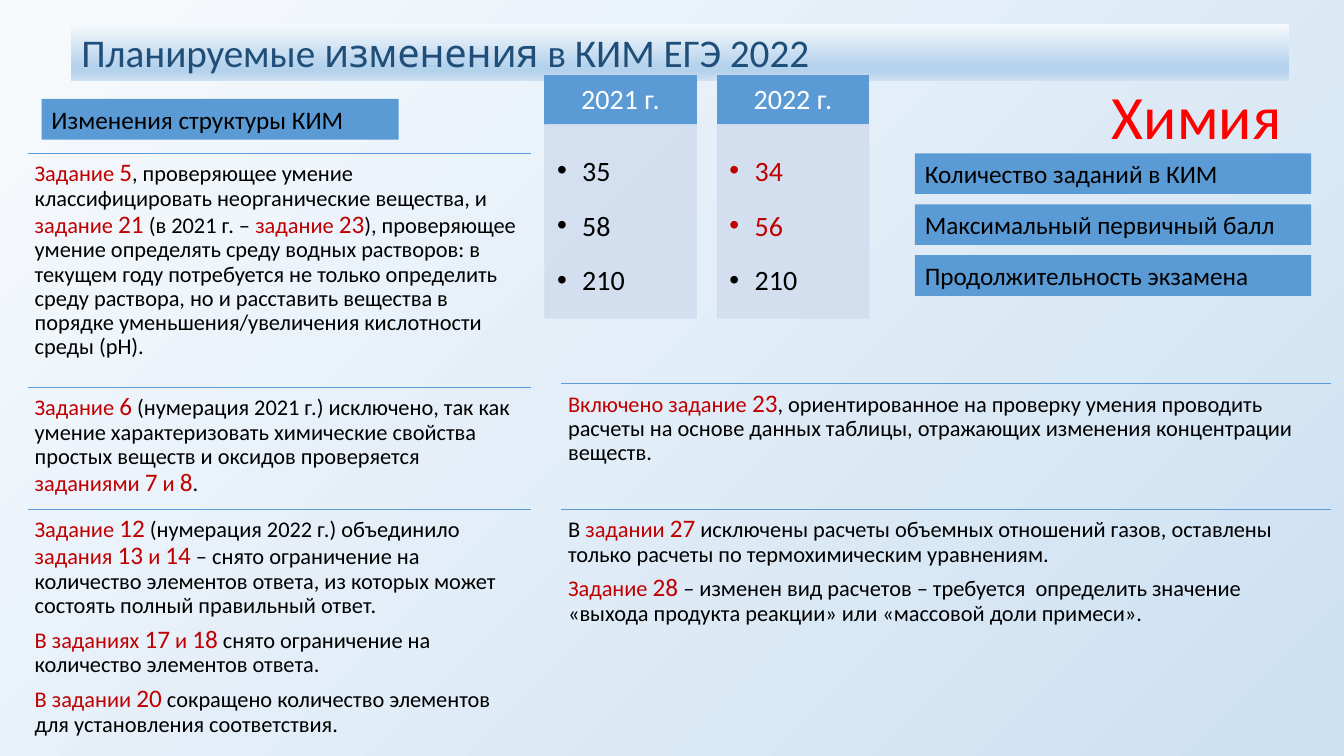
from copy import deepcopy
from itertools import groupby

from lxml.etree import SubElement
from pptx import Presentation
from pptx.dml.color import RGBColor
from pptx.enum.shapes import MSO_CONNECTOR as Connector, MSO_SHAPE as Shape
from pptx.enum.text import MSO_ANCHOR as Anchor, MSO_AUTO_SIZE as AutoSize, PP_ALIGN as Align
from pptx.oxml.ns import qn
from pptx.util import Pt

BLUE = RGBColor(0x5B, 0x9B, 0xD5)
NAVY = RGBColor(0x1F, 0x4E, 0x79)
PALE = RGBColor(0xF7, 0xFA, 0xFD)
SKY = RGBColor(0xB5, 0xD2, 0xEC)
MIST = RGBColor(0xCE, 0xE1, 0xF2)
PANEL = RGBColor(0xD2, 0xDE, 0xEF)
RED = RGBColor(0xFF, 0x00, 0x00)
CRIMSON = RGBColor(0xC0, 0x00, 0x00)
BLACK = RGBColor(0x00, 0x00, 0x00)
WHITE = RGBColor(0xFF, 0xFF, 0xFF)

FONT = "Calibri"
TAGS = ["Количество заданий в КИМ", "Максимальный первичный балл", "Продолжительность экзамена"]
YEARS = [
    ("2021 г.", [("35", BLACK), ("58", BLACK), ("210", BLACK)]),
    ("2022 г.", [("34", CRIMSON), ("56", CRIMSON), ("210", BLACK)]),
]

# Asterisks enclose highlighted words: left, top, width, height, paragraphs
LEFT, RIGHT = (20, 359.5), (401, 550)
CHANGES = [
    (LEFT, 109.5, 163, [
        "*Задание 5*, проверяющее умение классифицировать неорганические вещества, и "
        "*задание 21* (в 2021 г. – *задание 23*), проверяющее умение определять среду водных "
        "растворов: в текущем году потребуется не только определить среду раствора, но и "
        "расставить вещества в порядке уменьшения/увеличения кислотности среды (рН)."]),
    (LEFT, 276.5, 82, [
        "*Задание 6* (нумерация 2021 г.) исключено, так как умение характеризовать химические "
        "свойства простых веществ и оксидов проверяется *заданиями 7 и 8*."]),
    (RIGHT, 274, 69, [
        "*Включено задание 23*, ориентированное на проверку умения проводить расчеты на основе "
        "данных таблицы, отражающих изменения концентрации веществ."]),
    (LEFT, 363.5, 162, [
        "*Задание 12 *(нумерация 2022 г.) объединило *задания 13 и 14* – снято ограничение на "
        "количество элементов ответа, из которых может состоять полный правильный ответ.",
        "*В заданиях 17 и 18* снято ограничение на количество элементов ответа.",
        "*В задании 20* сокращено количество элементов для установления соответствия."]),
    (RIGHT, 363.5, 125, [
        "В *задании 27* исключены расчеты объемных отношений газов, оставлены только расчеты "
        "по термохимическим уравнениям.",
        "*Задание 28* – изменен вид расчетов – требуется  определить значение «выхода продукта "
        "реакции» или «массовой доли примеси»."]),
]


def write(frame, paragraphs, size=18, color=BLACK, align=Align.LEFT, anchor=Anchor.TOP,
          margins=(7.2, 3.6, 7.2, 3.6), spacing=1.0, after=0, bullet=False):
    """Each paragraph is a list of (text, overrides) spans."""
    frame.word_wrap = True
    frame.auto_size = AutoSize.NONE
    frame.vertical_anchor = anchor
    (frame.margin_left, frame.margin_top,
     frame.margin_right, frame.margin_bottom) = [Pt(margin) for margin in margins]
    for index, spans in enumerate(paragraphs):
        para = frame.add_paragraph() if index else frame.paragraphs[0]
        para.alignment = align
        para.line_spacing = spacing
        para.space_after = Pt(after)
        if bullet:
            properties = para._p.get_or_add_pPr()
            properties.set("marL", str(Pt(18)))
            properties.set("indent", str(-Pt(18)))
            SubElement(properties, qn("a:buFont")).set("typeface", "Arial")
            SubElement(properties, qn("a:buChar")).set("char", "•")
        for text, overrides in spans:
            span = para.add_run()
            span.text = text
            span.font.name = overrides.get("font", FONT)
            span.font.size = Pt(overrides.get("size", size))
            span.font.color.rgb = overrides.get("color", color)


def highlight(text):
    """Turn asterisk markup into spans: red words, with larger red numbers."""
    spans = []
    for index, part in enumerate(text.split("*")):
        if index % 2:
            for is_number, letters in groupby(part, str.isdigit):
                spans.append(("".join(letters), {"color": CRIMSON, "size": 18 if is_number else 16}))
        elif part:
            spans.append((part, {}))
    return spans


def paint_gradient(fill, element, stops, angle):
    fill.gradient()
    fill.gradient_angle = 360 - angle
    stop_list = element.find(".//" + qn("a:gsLst"))
    for _ in stops[2:]:
        stop_list.append(deepcopy(stop_list[0]))
    for stop, (position, color) in zip(fill.gradient_stops, stops):
        stop.position = position
        stop.color.rgb = color


class SlideBuilder:
    def __init__(self, page):
        self.page = page
        paint_gradient(page.background.fill, page._element, [(0, PALE), (0.97, MIST)], 45)

    def title(self, text, left, top, width, height):
        box = self.page.shapes.title
        box.left, box.top, box.width, box.height = Pt(left), Pt(top), Pt(width), Pt(height)
        write(box.text_frame, [[(text, {})]], size=44, color=RED, anchor=Anchor.MIDDLE, spacing=0.9)

    def rectangle(self, left, top, width, height, fill=None, outlined=False, opacity=100):
        box = self.page.shapes.add_shape(Shape.RECTANGLE, Pt(left), Pt(top), Pt(width), Pt(height))
        box.shadow.inherit = False
        box.line.fill.background()
        if fill is not None:
            box.fill.solid()
            box.fill.fore_color.rgb = fill
        if outlined:
            box.line.color.rgb = fill
            box.line.width = Pt(1)
        if opacity < 100:
            for color in list(box._element.spPr.iter(qn("a:srgbClr"))):
                SubElement(color, qn("a:alpha")).set("val", str(opacity * 1000))
        return box

    def banner(self, spans, left, top, width, height):
        box = self.rectangle(left, top, width, height)
        stops = [(0, PALE), (0.74, SKY), (0.83, SKY), (1, MIST)]
        paint_gradient(box.fill, box._element, stops, 90)
        write(box.text_frame, [spans], size=28, color=NAVY)

    def tag(self, text, left, top, width):
        box = self.rectangle(left, top, width, 29, BLUE)
        write(box.text_frame, [[(text, {})]])

    def year_card(self, year, figures, left, top):
        width, head_height = 108, 35.3
        head = self.rectangle(left, top, width, head_height, BLUE, outlined=True)
        write(head.text_frame, [[(year, {})]], size=20, color=WHITE, align=Align.CENTER,
              anchor=Anchor.MIDDLE, margins=(11.5, 6.5, 11.5, 6.5), spacing=0.9)
        body = self.rectangle(left, top + head_height, width, 138, PANEL, outlined=True, opacity=90)
        write(body.text_frame, [[(figure, {"color": color})] for figure, color in figures], size=20,
              margins=(8.6, 8.6, 11.5, 12.2), spacing=1.5, after=3, bullet=True)

    def rule(self, left, top, width):
        line = self.page.shapes.add_connector(
            Connector.STRAIGHT, Pt(left), Pt(top), Pt(left + width), Pt(top))
        line.line.color.rgb = BLUE
        line.line.width = Pt(0.5)
        SubElement(line._element.spPr, qn("a:effectLst"))

    def change(self, paragraphs, left, top, width, height):
        self.rule(left, top, width)
        box = self.page.shapes.add_textbox(Pt(left), Pt(top), Pt(width), Pt(height))
        write(box.text_frame, [highlight(text) for text in paragraphs], size=16,
              margins=(4.8, 4.8, 4.8, 4.8), spacing=0.9, after=5.6)


def main():
    deck = Presentation()
    deck.slide_width, deck.slide_height = Pt(960), Pt(540)
    slide = SlideBuilder(deck.slides.add_slide(deck.slide_layouts.get_by_name("Title Only")))

    slide.title("Химия", 787, 57, 150, 57)
    slide.banner([("Планируемые ", {}), ("изменения", {"font": "Cabin"}), (" в КИМ ЕГЭ 2022", {})],
                 51, 17, 870, 41)
    for index, text in enumerate(TAGS):
        slide.tag(text, 653.5, 109.5 + index * 36.4, 283)
    for index, (year, figures) in enumerate(YEARS):
        slide.year_card(year, figures, 389.3 + index * 123.2, 53.8)
    slide.tag("Изменения структуры КИМ", 29.7, 70.7, 255)
    for (left, width), top, height, paragraphs in CHANGES:
        slide.change(paragraphs, left, top, width, height)

    deck.save("out.pptx")


if __name__ == "__main__":
    main()
